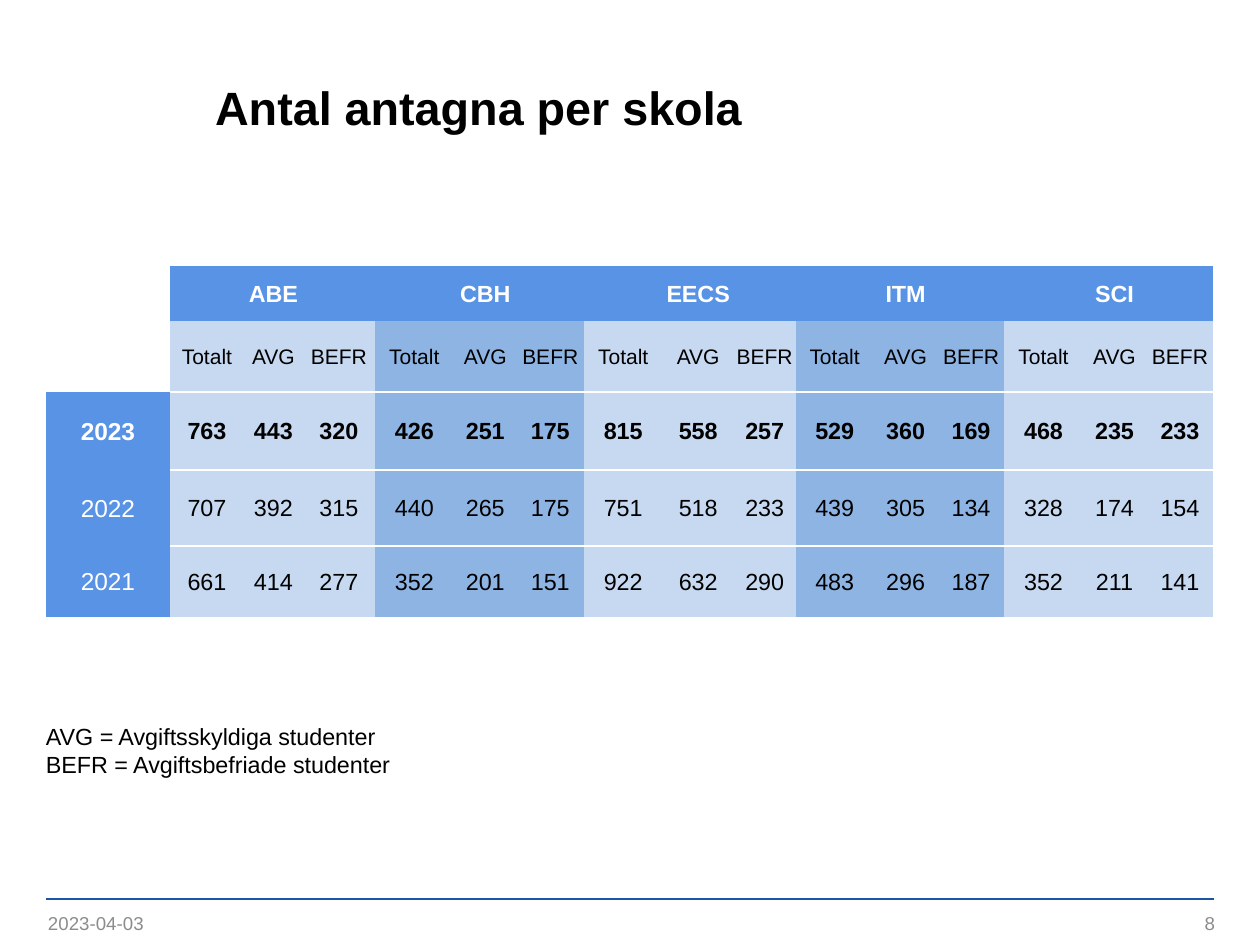
from dataclasses import dataclass

from lxml.etree import SubElement
from pptx import Presentation
from pptx.dml.color import RGBColor
from pptx.enum.shapes import MSO_CONNECTOR
from pptx.enum.text import MSO_ANCHOR, MSO_AUTO_SIZE, PP_ALIGN
from pptx.oxml.ns import qn
from pptx.util import Emu, Pt

SCALE = 914400 / 168
FONT = "Arial"
BLACK, WHITE, GREY = "000000", "FFFFFF", "8C8C8C"
HEADER, LIGHT, MEDIUM, RULE = "5893E5", "C6D9F1", "8EB4E3", "1954A6"

SCHOOLS = ["ABE", "CBH", "EECS", "ITM", "SCI"]
MEASURES = ["Totalt", "AVG", "BEFR"]
ADMITTED = {
    "2023": [763, 443, 320, 426, 251, 175, 815, 558, 257, 529, 360, 169, 468, 235, 233],
    "2022": [707, 392, 315, 440, 265, 175, 751, 518, 233, 439, 305, 134, 328, 174, 154],
    "2021": [661, 414, 277, 352, 201, 151, 922, 632, 290, 483, 296, 187, 352, 211, 141],
}
COL_WIDTHS = [124, 74, 59, 72, 79, 63, 67, 79, 71, 62, 78, 64, 67, 78, 64, 67]
ROW_HEIGHTS = [55, 71, 78, 76, 71]


@dataclass
class TextBox:
    lines: list[str]
    left: int
    top: int
    width: int
    height: int
    size: float
    color: str = BLACK
    bold: bool = False
    align: PP_ALIGN = PP_ALIGN.LEFT
    anchor: MSO_ANCHOR = MSO_ANCHOR.MIDDLE
    inset_x: int = 0
    inset_y: int = 0
    leading: float | None = None
    autosize: MSO_AUTO_SIZE = MSO_AUTO_SIZE.NONE


@dataclass
class CellStyle:
    fill: str
    size: float = 10
    color: str = BLACK
    bold: bool = False


TEXT_BOXES = [
    TextBox(["Antal antagna per skola"], 215, 47, 998, 124, 20, bold=True, leading=22.5),
    TextBox(["2023-04-03"], 48, 902, 284, 42, 8, GREY),
    TextBox(["8"], 931, 902, 284, 42, 8, GREY, align=PP_ALIGN.RIGHT),
    TextBox(["AVG = Avgiftsskyldiga studenter", "BEFR = Avgiftsbefriade studenter"],
            29, 714, 467, 74, 10, anchor=MSO_ANCHOR.TOP, inset_x=17, inset_y=8,
            autosize=MSO_AUTO_SIZE.SHAPE_TO_FIT_TEXT),
]


def px(n: int) -> Emu:
    return Emu(round(n * SCALE))


def rgb(color: str) -> RGBColor:
    return RGBColor.from_string(color)


def set_attrs(target, values: dict) -> None:
    for name, value in values.items():
        setattr(target, name, value)


def write(p, text: str, size: float, color: str, bold: bool) -> None:
    r = p.add_run()
    r.text = text
    set_attrs(r.font, {"name": FONT, "size": Pt(size), "bold": bold})
    r.font.color.rgb = rgb(color)


def add_text(slide, box: TextBox) -> None:
    sp = slide.shapes.add_textbox(*map(px, (box.left, box.top, box.width, box.height)))
    tf = sp.text_frame
    set_attrs(tf, {
        "word_wrap": True, "auto_size": box.autosize, "vertical_anchor": box.anchor,
        "margin_left": px(box.inset_x), "margin_right": px(box.inset_x),
        "margin_top": px(box.inset_y), "margin_bottom": px(box.inset_y),
    })
    for i, line in enumerate(box.lines):
        p = tf.add_paragraph() if i else tf.paragraphs[0]
        p.alignment = box.align
        if box.leading:
            p.line_spacing = Pt(box.leading)
        write(p, line, box.size, box.color, box.bold)


def set_borders(cell, top: bool, bottom: bool) -> None:
    """Draw white edges above and below as asked, and clear the others."""
    tc_pr = cell._tc.get_or_add_tcPr()
    for tag, shown in (("lnL", False), ("lnR", False), ("lnT", top), ("lnB", bottom)):
        ln = SubElement(tc_pr, qn(f"a:{tag}"), w=str(Pt(1)))
        if shown:
            fill = SubElement(ln, qn("a:solidFill"))
            SubElement(fill, qn("a:srgbClr"), val=WHITE)
        else:
            SubElement(ln, qn("a:noFill"))


def cell_style(row: int, col: int) -> CellStyle:
    if col == 0:
        return CellStyle(WHITE) if row < 2 else CellStyle(HEADER, 10.5, WHITE, row == 2)
    if row == 0:
        return CellStyle(HEADER, 10, WHITE, True)
    band = MEDIUM if (col - 1) // len(MEASURES) % 2 else LIGHT
    return CellStyle(band, 9 if row == 1 else 10, bold=row == 2)


def add_admissions(slide) -> None:
    school_row = [text for school in SCHOOLS for text in ("", school, "")]
    rows = [["", *school_row], ["", *MEASURES * len(SCHOOLS)]]
    rows += [[year, *map(str, values)] for year, values in ADMITTED.items()]
    size = sum(COL_WIDTHS), sum(ROW_HEIGHTS)
    table = slide.shapes.add_table(
        len(rows), len(COL_WIDTHS), *map(px, (46, 266, *size))).table
    set_attrs(table, {"first_row": False, "horz_banding": False})
    for column, width in zip(table.columns, COL_WIDTHS):
        column.width = px(width)
    for i, (row, height) in enumerate(zip(table.rows, ROW_HEIGHTS)):
        row.height = px(height)
        for j, cell in enumerate(row.cells):
            style = cell_style(i, j)
            set_attrs(cell, {
                "vertical_anchor": MSO_ANCHOR.MIDDLE, "margin_left": px(2),
                "margin_right": px(2), "margin_top": px(2), "margin_bottom": 0,
            })
            set_borders(cell, j > 0 and i > 1, j > 0 and 0 < i < len(rows) - 1)
            cell.fill.solid()
            cell.fill.fore_color.rgb = rgb(style.fill)
            if rows[i][j]:
                p = cell.text_frame.paragraphs[0]
                p.alignment = PP_ALIGN.CENTER
                write(p, rows[i][j], style.size, style.color, style.bold)


def add_footer_rule(slide) -> None:
    line = slide.shapes.add_connector(
        MSO_CONNECTOR.STRAIGHT, *map(px, (46, 899, 1214, 899)))
    line.line.width = Pt(1)
    line.line.color.rgb = rgb(RULE)
    SubElement(line._element.spPr, qn("a:effectLst"))


def main() -> None:
    prs = Presentation()
    set_attrs(prs, {"slide_width": px(1260), "slide_height": px(945)})
    slide = prs.slides.add_slide(prs.slide_layouts[6])
    add_footer_rule(slide)
    add_admissions(slide)
    for box in TEXT_BOXES:
        add_text(slide, box)
    prs.save("out.pptx")


if __name__ == "__main__":
    main()
